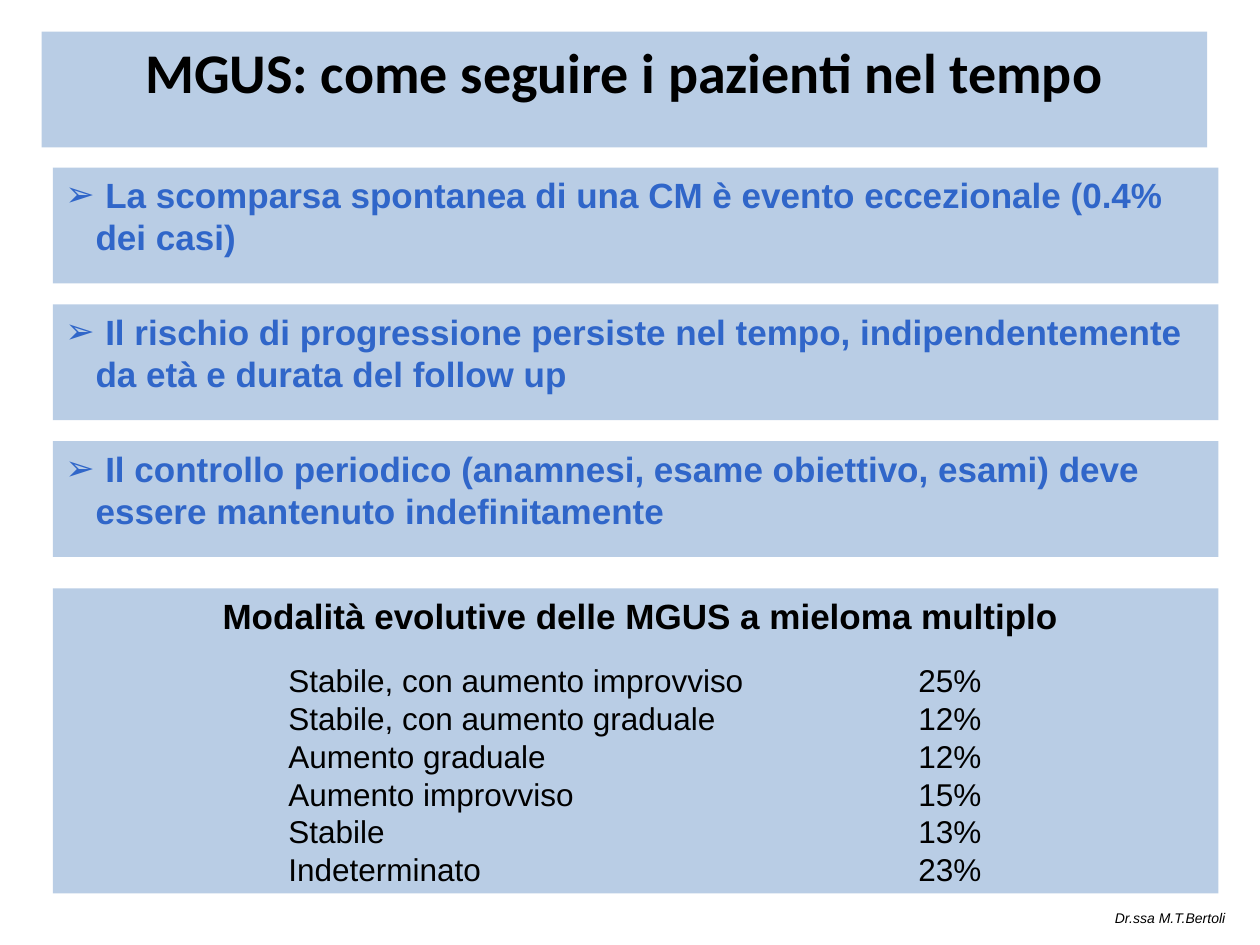
from dataclasses import dataclass

from lxml.etree import SubElement
from pptx import Presentation
from pptx.dml.color import RGBColor
from pptx.enum.shapes import MSO_SHAPE as Preset
from pptx.enum.text import MSO_ANCHOR as Anchor, PP_ALIGN as Align
from pptx.oxml.ns import qn
from pptx.slide import Slide
from pptx.text.text import TextFrame
from pptx.util import Inches, Pt

PALE_BLUE = RGBColor(0xB9, 0xCD, 0xE5)
BLUE = RGBColor(0x30, 0x66, 0xC9)
BLACK = RGBColor(0, 0, 0)

PANEL_WIDTH = 9.25
PANEL_LEFT = 0.42
BAND_HEIGHT = 0.92
FIRST_POINT_TOP = 1.33
POINT_STEP = 1.085
BULLET_INDENT = 0.24
COLUMN_STOPS = (1.77, 6.77)


@dataclass(frozen=True)
class Evolution:
    pattern: str
    share: str


FOLLOW_UP_POINTS = (
    " La scomparsa spontanea di una CM è evento eccezionale (0.4% dei casi)",
    " Il rischio di progressione persiste nel tempo, indipendentemente da età e durata del follow up",
    " Il controllo periodico (anamnesi, esame obiettivo, esami) deve essere mantenuto indefinitamente",
)
EVOLUTIONS = (
    Evolution("Stabile, con aumento improvviso", "25%"),
    Evolution("Stabile, con aumento graduale", "12%"),
    Evolution("Aumento graduale", "12%"),
    Evolution("Aumento improvviso", "15%"),
    Evolution("Stabile", "13%"),
    Evolution("Indeterminato", "23%"),
)


def add_panel(slide: Slide, left: float, top: float, height: float = BAND_HEIGHT) -> TextFrame:
    panel = slide.shapes.add_shape(
        Preset.RECTANGLE, Inches(left), Inches(top), Inches(PANEL_WIDTH), Inches(height)
    )
    panel.shadow.inherit = False
    panel.fill.solid()
    panel.fill.fore_color.rgb = PALE_BLUE
    panel.line.fill.background()
    panel.text_frame.word_wrap = True
    panel.text_frame.vertical_anchor = Anchor.TOP
    return panel.text_frame


def write(
    frame: TextFrame,
    text: str,
    *,
    size: float,
    font: str = "Arial",
    color: RGBColor = BLACK,
    bold: bool = False,
    italic: bool = False,
    align: Align = Align.LEFT,
    before: float = 0,
    bullet: str = "",
    stops: tuple[float, ...] = (),
) -> None:
    paragraph = frame.paragraphs[0] if not frame.text else frame.add_paragraph()
    paragraph.alignment = align
    paragraph.space_before = Pt(before)
    run = paragraph.add_run()
    run.text = text
    run.font.name = font
    run.font.size = Pt(size)
    run.font.bold = bold
    run.font.italic = italic
    run.font.color.rgb = color
    properties = paragraph._p.get_or_add_pPr()
    if bullet:
        properties.set("marL", str(Inches(BULLET_INDENT)))
        properties.set("indent", str(-Inches(BULLET_INDENT)))
        SubElement(properties, qn("a:buFont"), typeface=font)
        SubElement(properties, qn("a:buChar"), char=bullet)
    if stops:
        tabs = SubElement(properties, qn("a:tabLst"))
        for stop in stops:
            SubElement(tabs, qn("a:tab"), pos=str(Inches(stop)), algn="l")


def main() -> None:
    deck = Presentation()
    deck.slide_width, deck.slide_height = Inches(10), Inches(7.5)
    slide = deck.slides.add_slide(deck.slide_layouts[6])

    title = add_panel(slide, 0.33, 0.25)
    write(title, "MGUS: come seguire i pazienti nel tempo",
          size=32, font="Calibri", bold=True, align=Align.CENTER)

    for index, point in enumerate(FOLLOW_UP_POINTS):
        band = add_panel(slide, PANEL_LEFT, FIRST_POINT_TOP + index * POINT_STEP)
        write(band, point, size=20, color=BLUE, bold=True, bullet="➢")

    evolution_panel = add_panel(slide, PANEL_LEFT, 4.67, 2.42)
    write(evolution_panel, " Modalità evolutive delle MGUS a mieloma multiplo",
          size=20, bold=True, align=Align.CENTER)
    for index, evolution in enumerate(EVOLUTIONS):
        write(evolution_panel, f"\t{evolution.pattern}\t{evolution.share}", size=18,
              before=0 if index else 14, stops=COLUMN_STOPS)

    author = slide.shapes.add_textbox(
        Inches(8.75), Inches(7.17), Inches(1.17), Inches(0.23)
    ).text_frame
    author.word_wrap = True
    write(author, "Dr.ssa M.T.Bertoli", size=8, italic=True)

    deck.save("out.pptx")


if __name__ == "__main__":
    main()
